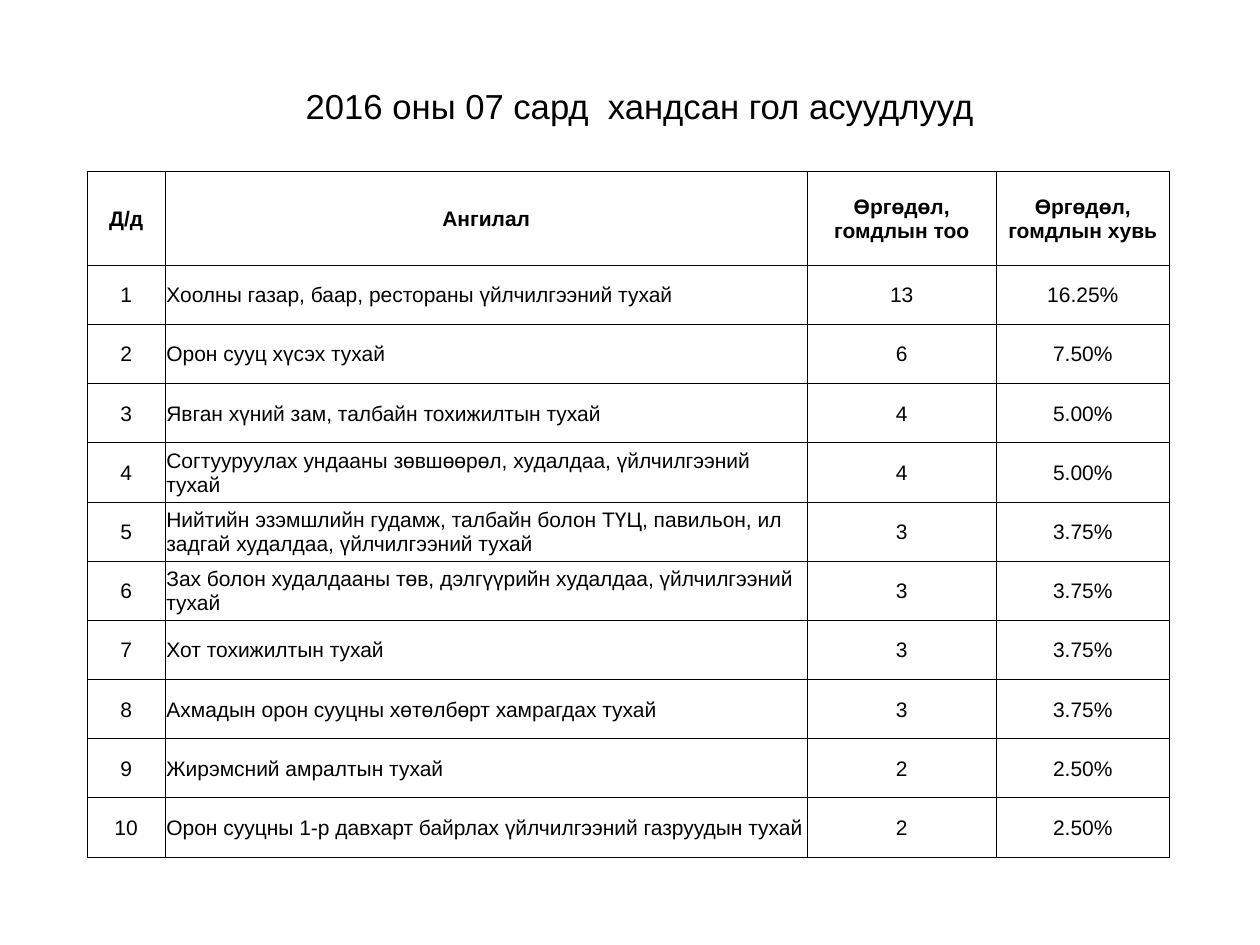
from lxml.etree import SubElement
from pptx import Presentation
from pptx.dml.color import RGBColor
from pptx.enum.text import MSO_ANCHOR, PP_ALIGN
from pptx.oxml.ns import qn
from pptx.util import Pt

BLACK = RGBColor(0x00, 0x00, 0x00)
WHITE = RGBColor(0xFF, 0xFF, 0xFF)
FONT = "Arial"

HEADINGS = ("Д/д", "Ангилал", "Өргөдөл, гомдлын тоо", "Өргөдөл, гомдлын хувь")
COMPLAINTS = (
    ("Хоолны газар, баар, рестораны үйлчилгээний тухай", "13", "16.25%"),
    ("Орон сууц хүсэх тухай", "6", "7.50%"),
    ("Явган хүний зам, талбайн тохижилтын тухай", "4", "5.00%"),
    ("Согтууруулах ундааны зөвшөөрөл, худалдаа, үйлчилгээний тухай", "4", "5.00%"),
    ("Нийтийн эзэмшлийн гудамж, талбайн болон ТҮЦ, павильон, ил задгай худалдаа, "
     "үйлчилгээний тухай", "3", "3.75%"),
    ("Зах болон худалдааны төв, дэлгүүрийн худалдаа, үйлчилгээний тухай", "3", "3.75%"),
    ("Хот тохижилтын тухай", "3", "3.75%"),
    ("Ахмадын орон сууцны хөтөлбөрт хамрагдах тухай", "3", "3.75%"),
    ("Жирэмсний амралтын тухай", "2", "2.50%"),
    ("Орон сууцны 1-р давхарт байрлах үйлчилгээний газруудын тухай", "2", "2.50%"),
)
COLUMN_WIDTHS = (44.6, 366.9, 108, 99)
CATEGORY_COLUMN = 1
HEADER_HEIGHT = 53.6


def write_text(frame, text, size=12, bold=False, align=PP_ALIGN.CENTER, color=BLACK):
    frame.word_wrap = True
    paragraph = frame.paragraphs[0]
    paragraph.alignment = align
    run = paragraph.add_run()
    run.text = text
    run.font.name = FONT
    run.font.size = Pt(size)
    run.font.bold = bold
    run.font.color.rgb = color


def draw_borders(cell, color=BLACK, width=0.5):
    properties = cell._tc.get_or_add_tcPr()
    for position, side in enumerate(("lnL", "lnR", "lnT", "lnB")):
        border = SubElement(properties, qn(f"a:{side}"), w=str(Pt(width)))
        fill = SubElement(border, qn("a:solidFill"))
        SubElement(fill, qn("a:srgbClr"), val=str(color))
        properties.insert(position, border)


def format_cell(cell):
    cell.fill.solid()
    cell.fill.fore_color.rgb = WHITE
    cell.vertical_anchor = MSO_ANCHOR.MIDDLE
    cell.margin_left = cell.margin_right = cell.margin_top = Pt(0.7)
    cell.margin_bottom = Pt(0)
    draw_borders(cell)


def add_title(slide, left, top, width, height):
    title = slide.shapes.add_textbox(Pt(left), Pt(top), Pt(width), Pt(height))
    title.text_frame.vertical_anchor = MSO_ANCHOR.MIDDLE
    write_text(title.text_frame, "2016 оны 07 сард  хандсан гол асуудлууд", size=19.8)


def add_complaints_table(slide, left, top, width, height):
    records = [HEADINGS] + [
        (str(number), *complaint) for number, complaint in enumerate(COMPLAINTS, 1)
    ]
    table = slide.shapes.add_table(
        len(records), len(HEADINGS), Pt(left), Pt(top), Pt(width), Pt(height)
    ).table
    table.horz_banding = False
    scale = width / sum(COLUMN_WIDTHS)
    for column, column_width in zip(table.columns, COLUMN_WIDTHS):
        column.width = Pt(column_width * scale)

    row_height = (height - HEADER_HEIGHT) / len(COMPLAINTS)
    for row_index, record in enumerate(records):
        is_header = row_index == 0
        table.rows[row_index].height = Pt(HEADER_HEIGHT if is_header else row_height)
        for column_index, text in enumerate(record):
            cell = table.cell(row_index, column_index)
            is_category = column_index == CATEGORY_COLUMN and not is_header
            format_cell(cell)
            write_text(
                cell.text_frame,
                text,
                bold=is_header,
                align=PP_ALIGN.LEFT if is_category else PP_ALIGN.CENTER,
            )


def main():
    presentation = Presentation()
    presentation.slide_width = Pt(720)
    presentation.slide_height = Pt(540)
    slide = presentation.slides.add_slide(presentation.slide_layouts[6])
    slide.background.fill.solid()
    slide.background.fill.fore_color.rgb = WHITE
    add_title(slide, 70.5, 32.4, 590, 55.4)
    add_complaints_table(slide, 49.8, 98, 618.5, 392)
    presentation.save("out.pptx")


if __name__ == "__main__":
    main()
